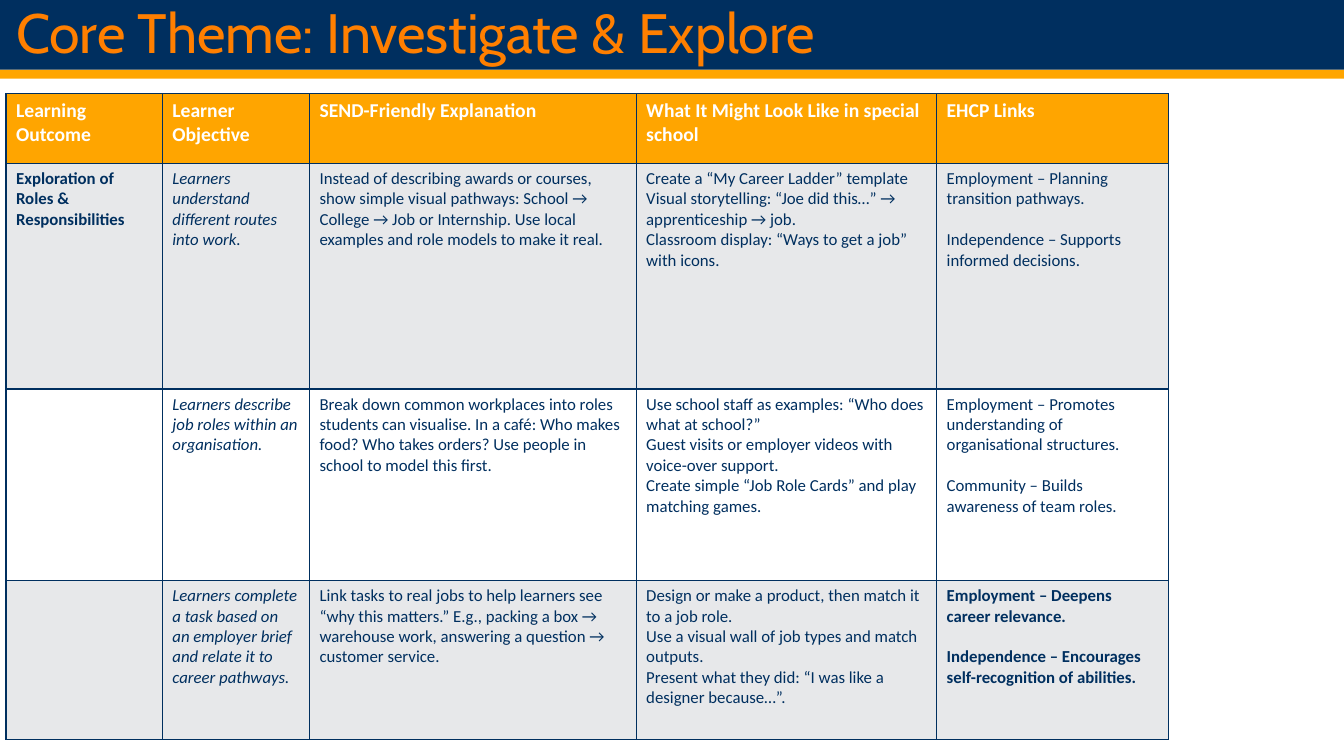
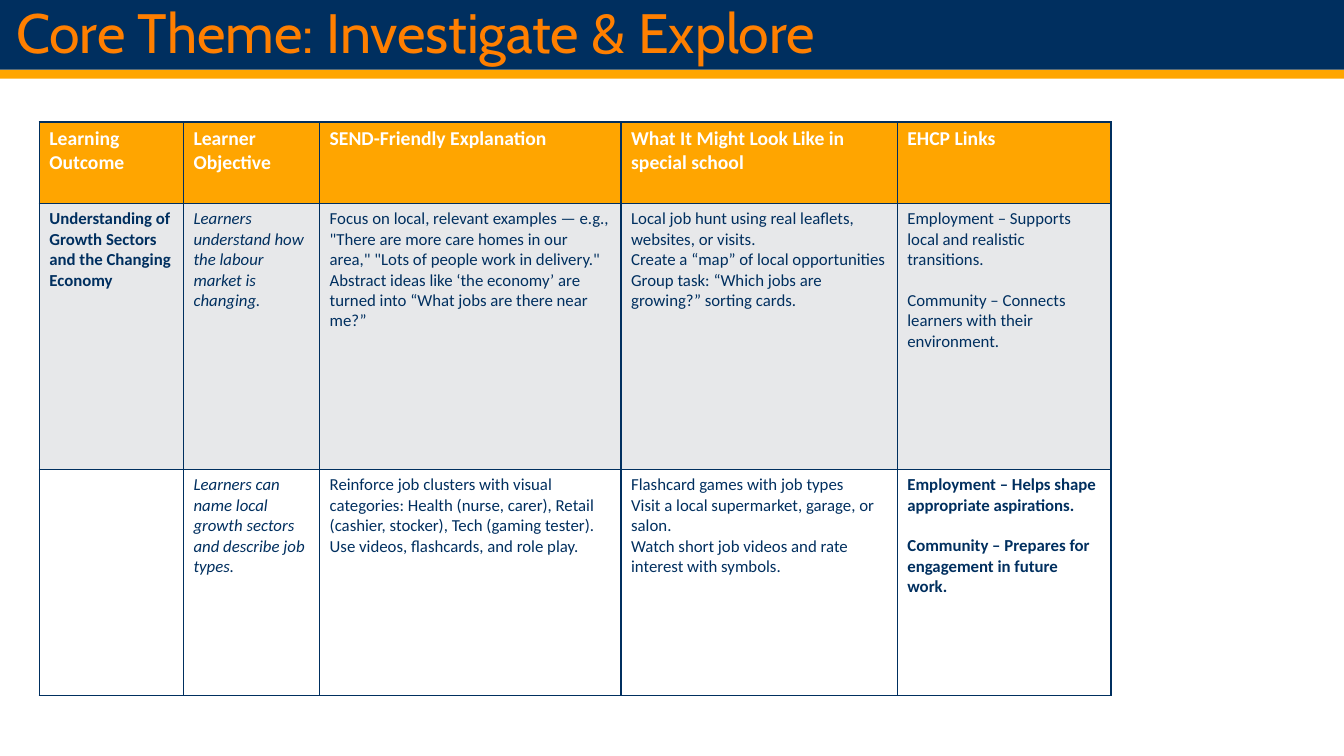
from lxml.etree import SubElement
from pptx import Presentation
from pptx.dml.color import RGBColor
from pptx.enum.shapes import MSO_SHAPE
from pptx.enum.text import MSO_ANCHOR, MSO_AUTO_SIZE, PP_ALIGN
from pptx.oxml.ns import qn
from pptx.util import Inches, Pt

NAVY = RGBColor(0x00, 0x2F, 0x5F)
AMBER = RGBColor(0xFF, 0xA5, 0x00)
ORANGE = RGBColor(0xFF, 0x7F, 0x00)
GREY = RGBColor(0xE7, 0xE8, 0xEA)
WHITE = RGBColor(0xFF, 0xFF, 0xFF)

TITLE = "Core Theme: Investigate & Explore"
HEADINGS = (
    "Learning Outcome",
    "Learner Objective",
    "SEND-Friendly Explanation",
    "What It Might Look Like in special school",
    "EHCP Links",
)
OUTCOME, OBJECTIVE, LINKS = 0, 1, 4

# One entry per slide; each line break in a cell starts a new paragraph
THEMES = [
    {
        "left": 0.06, "top": 0.93,
        "columns": (1.55, 1.46, 3.24, 2.98, 2.3),
        "heights": (0.69, 2.24, 1.9, 1.58),
        "rows": [
            (
                "Exploration of Roles & Responsibilities",
                "Learners understand different routes into work.",
                "Instead of describing awards or courses, show simple visual pathways: "
                "School → College → Job or Internship. Use local examples and role "
                "models to make it real.",
                "Create a “My Career Ladder” template\n"
                "Visual storytelling: “Joe did this…” → apprenticeship → job.\n"
                "Classroom display: “Ways to get a job” with icons.",
                "Employment – Planning transition pathways.\n"
                "Independence – Supports informed decisions.",
            ),
            (
                "",
                "Learners describe job roles within an organisation.",
                "Break down common workplaces into roles students can visualise. In a "
                "café: Who makes food? Who takes orders? Use people in school to model "
                "this first.",
                "Use school staff as examples: “Who does what at school?”\n"
                "Guest visits or employer videos with voice-over support.\n"
                "Create simple “Job Role Cards” and play matching games.",
                "Employment – Promotes understanding of organisational structures.\n"
                "Community – Builds awareness of team roles.",
            ),
            (
                "",
                "Learners complete a task based on an employer brief and relate it to "
                "career pathways.",
                "Link tasks to real jobs to help learners see “why this matters.” E.g., "
                "packing a box → warehouse work, answering a question → customer service.",
                "Design or make a product, then match it to a job role.\n"
                "Use a visual wall of job types and match outputs.\n"
                "Present what they did: “I was like a designer because…”.",
                "Employment – Deepens career relevance.\n"
                "Independence – Encourages self-recognition of abilities.",
            ),
        ],
    },
    {
        "left": 0.39, "top": 1.21,
        "columns": (1.43, 1.35, 2.99, 2.74, 2.12),
        "heights": (0.81, 2.64, 2.24),
        "rows": [
            (
                "Understanding of Growth Sectors and the Changing Economy",
                "Learners understand how the labour market is changing.",
                'Focus on local, relevant examples — e.g., "There are more care homes in '
                'our area," "Lots of people work in delivery." Abstract ideas like ‘the '
                "economy’ are turned into “What jobs are there near me?”",
                "Local job hunt using real leaflets, websites, or visits.\n"
                "Create a “map” of local opportunities\n"
                "Group task: “Which jobs are growing?” sorting cards.",
                "Employment – Supports local and realistic transitions.\n"
                "Community – Connects learners with their environment.",
            ),
            (
                "",
                "Learners can name local growth sectors and describe job types.",
                "Reinforce job clusters with visual categories: Health (nurse, carer), "
                "Retail (cashier, stocker), Tech (gaming tester). Use videos, "
                "flashcards, and role play.",
                "Flashcard games with job types\n"
                "Visit a local supermarket, garage, or salon.\n"
                "Watch short job videos and rate interest with symbols.",
                "Employment – Helps shape appropriate aspirations.\n"
                "Community – Prepares for engagement in future work.",
            ),
        ],
    },
]


def add_borders(cell):
    """Draw a 1 pt navy line on every side of a cell."""
    properties = cell._tc.get_or_add_tcPr()
    for side in ("a:lnL", "a:lnR", "a:lnT", "a:lnB"):
        line = SubElement(properties, qn(side), w=str(Pt(1)))
        SubElement(SubElement(line, qn("a:solidFill")), qn("a:srgbClr"), val=str(NAVY))


prs = Presentation()
prs.slide_width, prs.slide_height = Inches(13.33), Inches(7.5)
layout = prs.slide_layouts[5]
slides = [prs.slides.add_slide(layout) for _ in THEMES]

# Shared header bands: drawn once, then moved behind the layout's title
for position, (top, height, color) in enumerate([(0.69, 0.09, AMBER), (0, 0.69, NAVY)]):
    band = slides[0].shapes.add_shape(
        MSO_SHAPE.RECTANGLE, 0, Inches(top), prs.slide_width, Inches(height))
    band.shadow.inherit = False
    band.fill.solid()
    band.fill.fore_color.rgb = color
    band.line.fill.background()
    layout.shapes.element.insert(2 + position, band._element)

for slide, theme in zip(slides, THEMES):
    # Title
    title = slide.shapes.title
    title.left, title.top = Inches(0.06), Inches(0.05)
    title.width, title.height = Inches(11.53), Inches(0.6)
    title.text_frame.text = TITLE
    title.text_frame.auto_size = MSO_AUTO_SIZE.NONE
    title.text_frame.vertical_anchor = MSO_ANCHOR.MIDDLE
    heading = title.text_frame.paragraphs[0]
    heading.alignment = PP_ALIGN.LEFT
    heading.line_spacing = 0.9
    heading.font.name = "Cabin"
    heading.font.size = Pt(39.6)
    heading.font.color.rgb = ORANGE

    # Outcomes table
    rows = [HEADINGS, *theme["rows"]]
    outcomes = slide.shapes.add_table(
        len(rows), len(HEADINGS), Inches(theme["left"]), Inches(theme["top"]),
        Inches(sum(theme["columns"])), Inches(sum(theme["heights"]))).table
    outcomes.horz_banding = False
    for column, width in zip(outcomes.columns, theme["columns"]):
        column.width = Inches(width)
    for row, height in zip(outcomes.rows, theme["heights"]):
        row.height = Inches(height)

    for r, texts in enumerate(rows):
        is_header, is_last = r == 0, r == len(rows) - 1
        for c, text in enumerate(texts):
            cell = outcomes.cell(r, c)
            add_borders(cell)
            cell.fill.solid()
            cell.fill.fore_color.rgb = AMBER if is_header else GREY if r % 2 else WHITE
            cell.text_frame.text = text
            for i, paragraph in enumerate(cell.text_frame.paragraphs):
                if c == LINKS and i > 0:
                    paragraph.space_before = Pt(14.5)
                font = paragraph.font
                font.name = "Calibri"
                font.size = Pt(14 if is_header else 12)
                font.color.rgb = WHITE if is_header else NAVY
                font.bold = is_header or c == OUTCOME or (is_last and c == LINKS)
                font.italic = c == OBJECTIVE and not is_header

prs.save("out.pptx")
